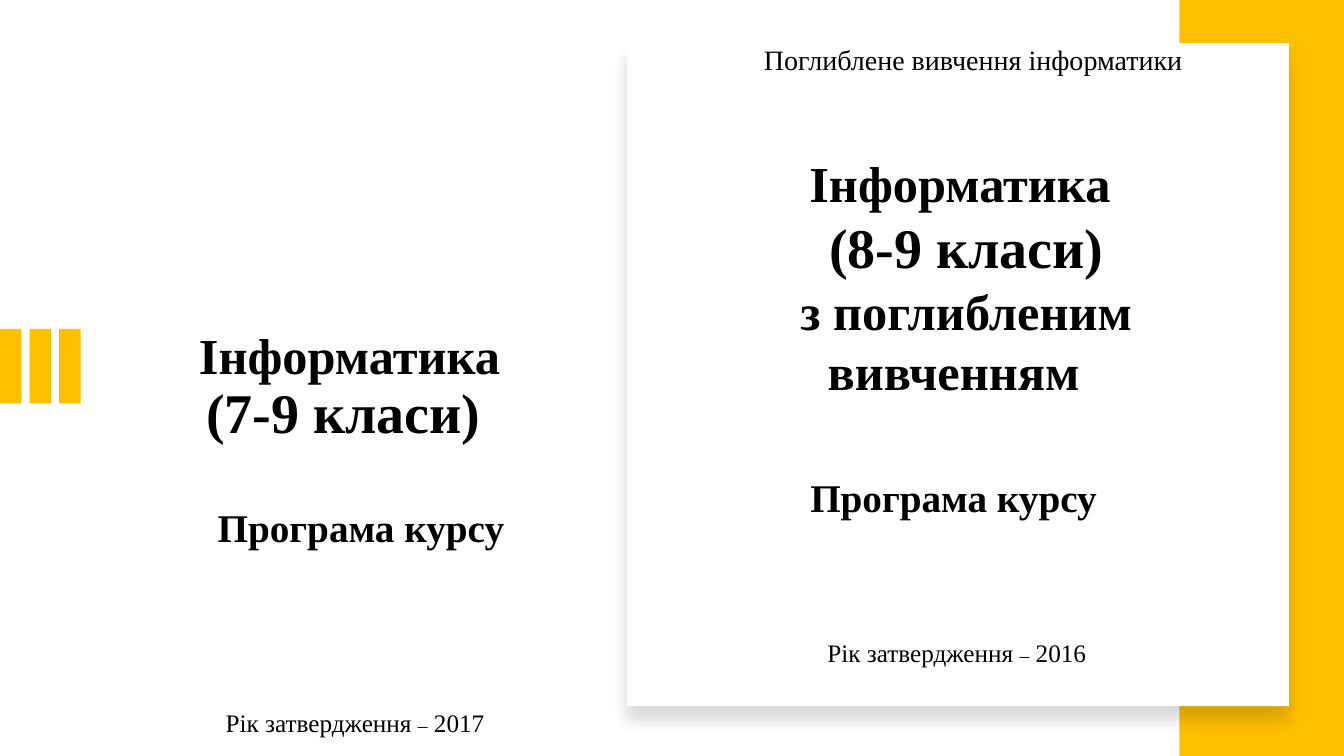
from dataclasses import dataclass

from lxml.etree import SubElement
from pptx import Presentation
from pptx.dml.color import RGBColor
from pptx.enum.shapes import MSO_SHAPE
from pptx.enum.text import MSO_ANCHOR, MSO_AUTO_SIZE, PP_ALIGN
from pptx.oxml.ns import qn
from pptx.util import Pt

GOLD = RGBColor(0xFF, 0xC0, 0x00)
WHITE = RGBColor(0xFF, 0xFF, 0xFF)
BLACK = RGBColor(0x00, 0x00, 0x00)
FONT = "Times New Roman"


@dataclass(frozen=True)
class Box:
    left: float
    top: float
    width: float
    height: float

    def lengths(self) -> tuple:
        return Pt(self.left), Pt(self.top), Pt(self.width), Pt(self.height)


@dataclass(frozen=True)
class Piece:
    text: str
    size: float
    breaks_after: bool = False


@dataclass(frozen=True)
class Caption:
    box: Box
    paragraphs: tuple
    bold: bool = False
    align: PP_ALIGN = PP_ALIGN.LEFT


def approval_year(left: float, top: float, year: str) -> Caption:
    pieces = (Piece("Рік затвердження ", 18), Piece("–", 14), Piece(f" {year}", 18))
    return Caption(Box(left, top, 226.8, 29), (pieces,))


def course_programme(left: float, top: float) -> Caption:
    pieces = (Piece("Програма курсу", 28),)
    return Caption(Box(left, top, 417.6, 41), (pieces,), True, PP_ALIGN.CENTER)


def write_text(frame, caption: Caption, line_spacing: float = 1.0) -> None:
    frame.word_wrap = True
    frame.vertical_anchor = MSO_ANCHOR.TOP
    for index, pieces in enumerate(caption.paragraphs):
        paragraph = frame.paragraphs[0] if index == 0 else frame.add_paragraph()
        paragraph.alignment = caption.align
        paragraph.line_spacing = line_spacing
        for piece in pieces:
            run = paragraph.add_run()
            run.text = piece.text
            run.font.name = FONT
            run.font.size = Pt(piece.size)
            run.font.bold = caption.bold
            run.font.color.rgb = BLACK
            if piece.breaks_after:
                paragraph.add_line_break()


def add_caption(shapes, caption: Caption) -> None:
    frame = shapes.add_textbox(*caption.box.lengths()).text_frame
    write_text(frame, caption)
    frame.auto_size = MSO_AUTO_SIZE.SHAPE_TO_FIT_TEXT


def add_block(shapes, box: Box, color: RGBColor):
    block = shapes.add_shape(MSO_SHAPE.RECTANGLE, *box.lengths())
    block.shadow.inherit = False
    block.fill.solid()
    block.fill.fore_color.rgb = color
    block.line.fill.background()
    return block


def add_soft_shadow(block) -> None:
    effects = block._element.spPr.find(qn("a:effectLst"))
    shadow = SubElement(effects, qn("a:outerShdw"), blurRad=str(Pt(11)),
                        dist=str(Pt(10)), dir=str(90 * 60000), rotWithShape="0")
    color = SubElement(shadow, qn("a:srgbClr"), val=str(BLACK))
    SubElement(color, qn("a:alpha"), val="15000")


MAIN_COURSE = Caption(
    Box(67.7, 232.6, 373, 96.5),
    ((Piece("Інформатика ", 36, True), Piece("(7-9 класи)", 40), Piece("  ", 36)),),
    True, PP_ALIGN.CENTER)

CAPTIONS = (
    approval_year(154.1, 501.8, "2017"),
    course_programme(49, 355.7),
    Caption(Box(538.6, 26.6, 316.8, 31.5),
            ((Piece("Поглиблене вивчення інформатики", 20),),)),
    Caption(Box(538.6, 105.1, 303.1, 186.5),
            ((Piece("Інформатика ", 36, True), Piece("(8-9 класи)", 40)),
             (Piece("з поглибленим вивченням  ", 36),)),
            True, PP_ALIGN.CENTER),
    approval_year(583.9, 451.4, "2016"),
    course_programme(472.3, 334.8),
)

BAR_COUNT, BAR_STEP = 3, 21.15


def main() -> None:
    deck = Presentation()
    deck.slide_width, deck.slide_height = Pt(960), Pt(540)
    slide = deck.slides.add_slide(deck.slide_layouts[5])
    slide.background.fill.solid()
    slide.background.fill.fore_color.rgb = WHITE

    # Title of the main course
    title = slide.shapes.title
    title.left, title.top, title.width, title.height = MAIN_COURSE.box.lengths()
    write_text(title.text_frame, MAIN_COURSE, line_spacing=0.9)
    title.text_frame.auto_size = MSO_AUTO_SIZE.NONE

    # Gold bars at the left edge
    bars = slide.shapes.add_group_shape()
    for index in range(BAR_COUNT):
        add_block(bars.shapes, Box(index * BAR_STEP, 234.9, 15.3, 53.3), GOLD)

    # Gold band and the white card over it
    add_block(slide.shapes, Box(842.4, 0, 117.6, 540), GOLD)
    card = add_block(slide.shapes, Box(447.8, 30.8, 473, 473.6), WHITE)
    add_soft_shadow(card)

    # Captions of both courses
    for caption in CAPTIONS:
        add_caption(slide.shapes, caption)

    deck.save("out.pptx")


if __name__ == "__main__":
    main()
